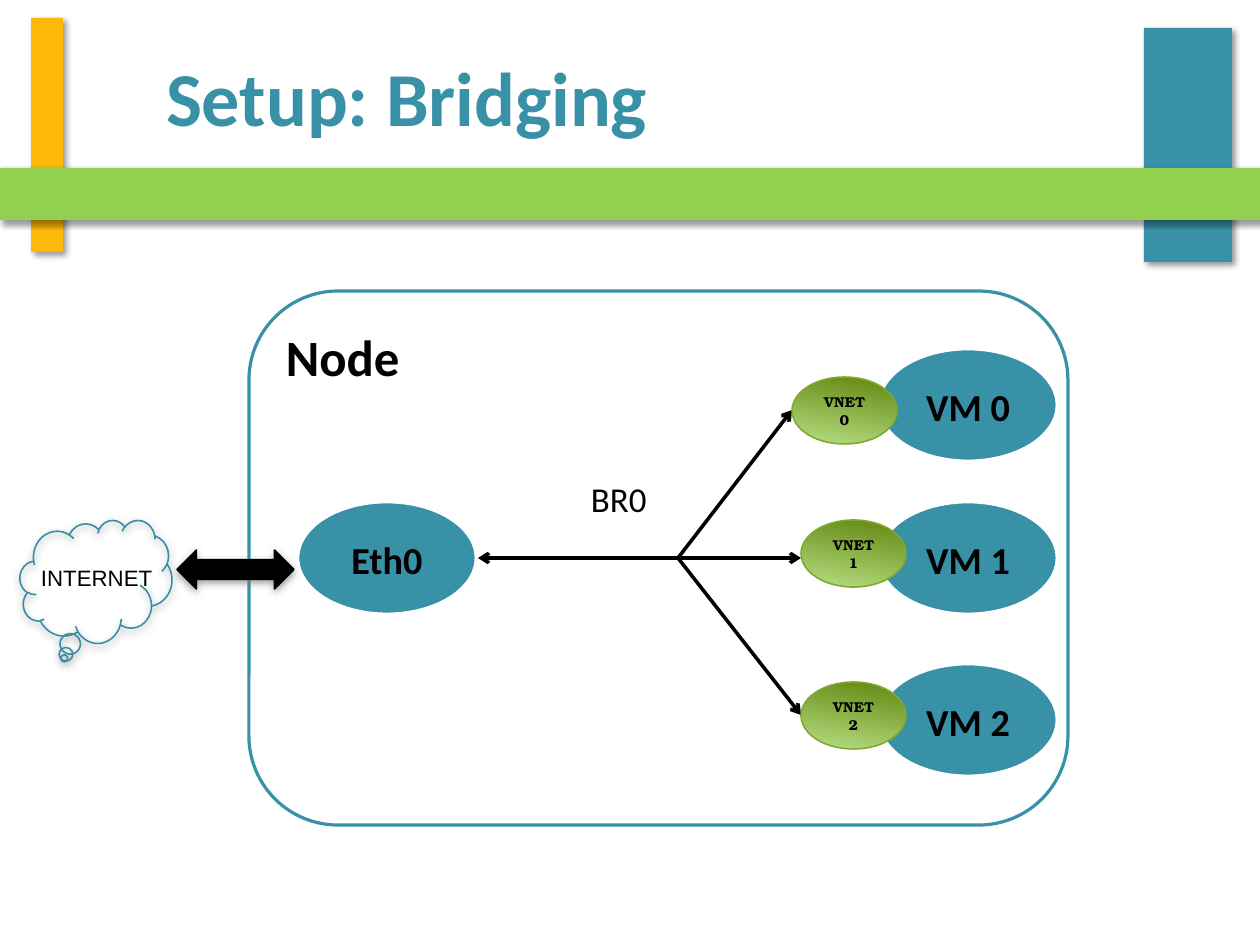
from lxml.etree import SubElement
from pptx import Presentation
from pptx.dml.color import RGBColor
from pptx.enum.shapes import MSO_CONNECTOR, MSO_SHAPE
from pptx.enum.text import MSO_ANCHOR, PP_ALIGN
from pptx.oxml.ns import qn
from pptx.util import Emu, Pt

PX = 8000
COLORS = {
    "teal": "3891A7", "title": "3891A6", "cloud": "348FA6",
    "amber": "FEB80A", "green": "92D050", "white": "FFFFFF",
    "black": "000000", "gray": "808080", "vnet_line": "82A92F",
    "vnet_dark": "60860E", "vnet_light": "B8DF84",
}
BAR_SHADOW = ("black", 40, 4, 3, 45)
SOFT_SHADOW = ("gray", 75, 5, 2, 90)


def px(*lengths):
    return [Emu(length * PX) for length in lengths]


def rgb(name):
    return RGBColor.from_string(COLORS[name])


def write(shape, text, size, font="Calibri", color="black", bold=False,
          align=PP_ALIGN.LEFT, anchor=MSO_ANCHOR.TOP, spacing=None,
          inset=(11, 6), wrap=True):
    frame = shape.text_frame
    frame.word_wrap = wrap
    frame.vertical_anchor = anchor
    frame.margin_left = frame.margin_right = Emu(inset[0] * PX)
    frame.margin_top = frame.margin_bottom = Emu(inset[1] * PX)
    line = frame.paragraphs[0]
    line.alignment = align
    if spacing:
        line.line_spacing = spacing
    run = line.add_run()
    run.text = text
    run.font.name = font
    run.font.size = Pt(size)
    run.font.bold = bold
    run.font.color.rgb = rgb(color)


def label(slide, box, text, size, **style):
    write(slide.shapes.add_textbox(*px(*box)), text, size, **style)


def draw(slide, preset, box, fill=None, line=None, width=1, shadow=None):
    shape = slide.shapes.add_shape(preset, *px(*box))
    if isinstance(fill, tuple):
        shape.fill.gradient()
        shape.fill.gradient_angle = 260
        for stop, name in zip(shape.fill.gradient_stops, fill):
            stop.color.rgb = rgb(name)
    elif fill:
        shape.fill.solid()
        shape.fill.fore_color.rgb = rgb(fill)
    else:
        shape.fill.background()
    if line:
        shape.line.color.rgb = rgb(line)
        shape.line.width = Pt(width)
    else:
        shape.line.fill.background()
    shape.shadow.inherit = False
    if shadow:
        color, opacity, blur, distance, angle = shadow
        effects = shape._element.spPr.find(qn("a:effectLst"))
        outer = SubElement(effects, qn("a:outerShdw"), blurRad=str(Pt(blur)),
                           dist=str(Pt(distance)), dir=str(angle * 60000),
                           algn="ctr", rotWithShape="0")
        tint = SubElement(outer, qn("a:srgbClr"), val=COLORS[color])
        SubElement(tint, qn("a:alpha"), val=str(opacity * 1000))
    return shape


def link(slide, start, end):
    arrow = slide.shapes.add_connector(MSO_CONNECTOR.STRAIGHT, *px(*start, *end))
    arrow.line.color.rgb = rgb("black")
    arrow.line.width = Pt(2.25)
    SubElement(arrow.line._get_or_add_ln(), qn("a:tailEnd"), type="arrow")
    SubElement(arrow._element.spPr, qn("a:effectLst"))


def header(slide, left, top, width):
    bars = [
        ((left + 31, top + 18, 32, 234), "amber"),
        ((left + width - 116, top + 28, 88, 234), "teal"),
        ((left, top + 168, width, 52), "green"),
    ]
    for box, color in bars:
        draw(slide, MSO_SHAPE.RECTANGLE, box, color, shadow=BAR_SHADOW)
    label(slide, (left + 153, top + 43, 868, 87), "Setup: Bridging", 48,
          color="title", bold=True, inset=(13, 7))


def machine(slide, left, top, name):
    oval = draw(slide, MSO_SHAPE.OVAL, (left, top, 180, 114), "teal", "white", 3)
    write(oval, name, 24, bold=True, align=PP_ALIGN.CENTER,
          anchor=MSO_ANCHOR.MIDDLE, spacing=1.04)


def vnet(slide, left, top, name):
    oval = draw(slide, MSO_SHAPE.OVAL, (left, top, 105, 67),
                ("vnet_dark", "vnet_light"), "vnet_line")
    write(oval, name, 9, font="TeX Gyre Bonum", bold=True,
          align=PP_ALIGN.CENTER, anchor=MSO_ANCHOR.MIDDLE, spacing=1.04)


def node(slide, left, top, width, height):
    frame = draw(slide, MSO_SHAPE.ROUNDED_RECTANGLE, (left, top, width, height),
                 "white", "teal", 2)
    write(frame, "Node", 32, bold=True, spacing=1.04)
    label(slide, (left + 329, top + 180, 110, 71), "BR0", 22, inset=(13, 7))
    machine(slide, left + 48, top + 210, "Eth0")

    vm_tops = [top + 57, top + 210, top + 372]
    vnet_spots = [(left + 543, top + 86), (left + 552, top + 229),
                  (left + 552, top + 391)]
    for number, vm_top in enumerate(vm_tops):
        machine(slide, left + 629, vm_top, f"VM {number}")

    hub_x, hub_y = left + 429, top + 267
    link(slide, (hub_x + 48, hub_y), (left + 229, hub_y))
    link(slide, (hub_x, hub_y), (left + 543, top + 119))
    link(slide, (hub_x - 29, hub_y), (left + 552, hub_y))
    link(slide, (hub_x, hub_y), (left + 552, top + 424))
    for number, spot in enumerate(vnet_spots):
        vnet(slide, *spot, f"VNET {number}")


def internet(slide, left, top):
    draw(slide, MSO_SHAPE.LEFT_RIGHT_ARROW, (left + 157, top + 30, 117, 39),
         "black", "black", shadow=SOFT_SHADOW)
    label(slide, (left + 10, top + 37, 144, 39), "INTERNET", 14, font="Arial",
          spacing=1.04, wrap=False)
    draw(slide, MSO_SHAPE.CLOUD_CALLOUT, (left, top, 152, 123), line="cloud",
         shadow=SOFT_SHADOW)


def main():
    deck = Presentation()
    deck.slide_width, deck.slide_height = px(1260, 945)
    slide = deck.slides.add_slide(deck.slide_layouts[6])
    header(slide, 0, 0, 1260)
    node(slide, 249, 291, 819, 534)
    internet(slide, 20, 520)
    deck.save("out.pptx")


if __name__ == "__main__":
    main()
